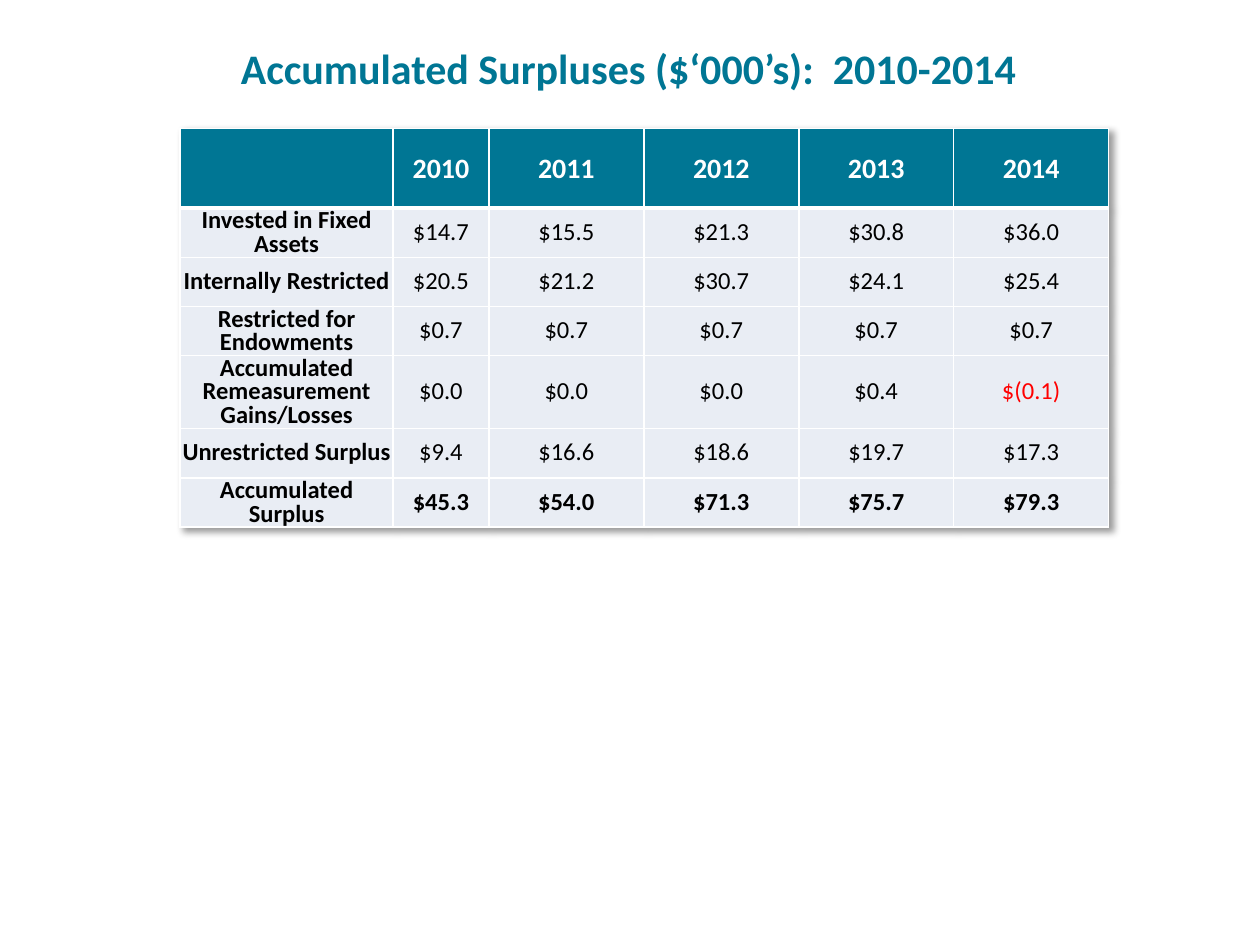
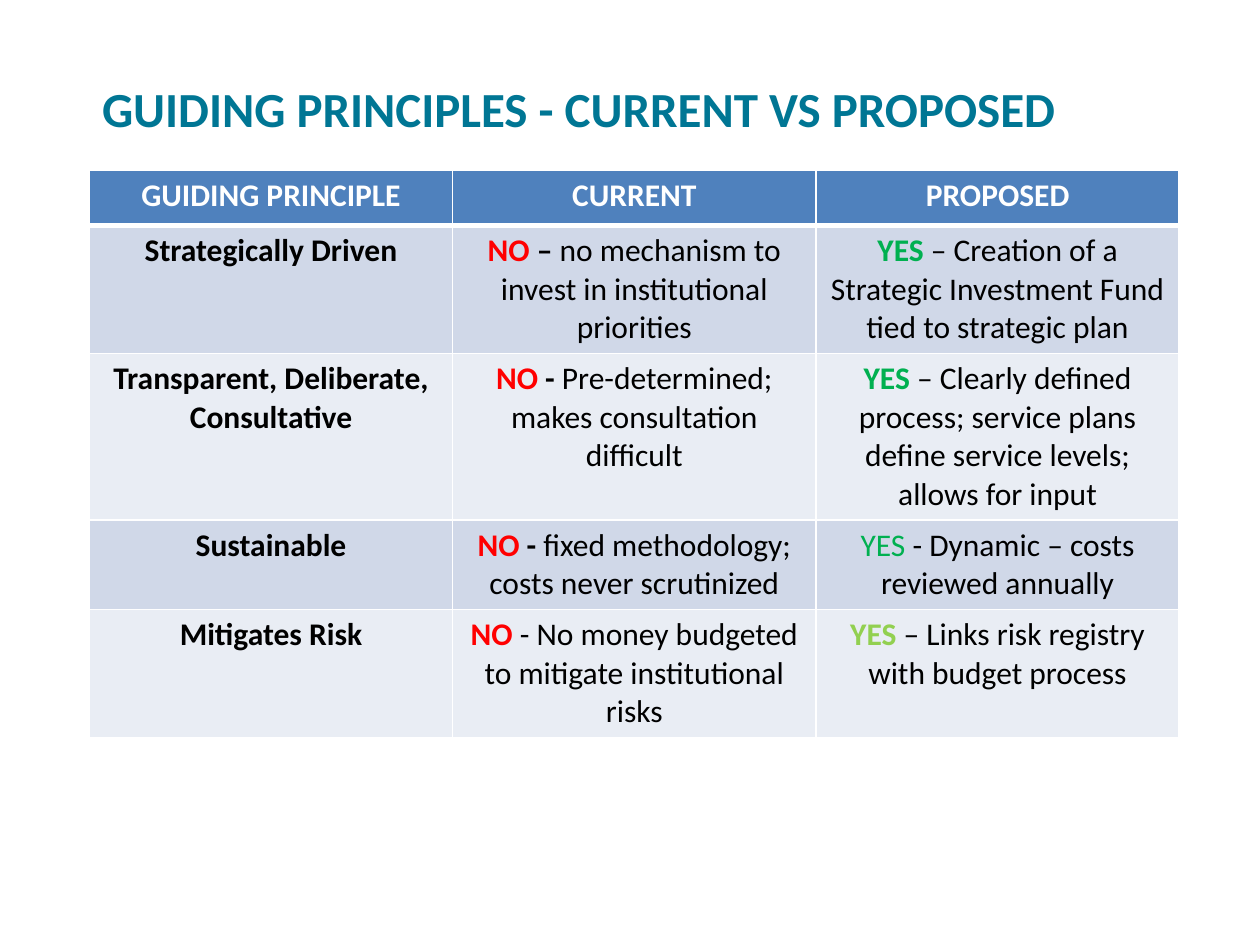
from lxml.etree import SubElement
from pptx import Presentation
from pptx.dml.color import RGBColor
from pptx.enum.text import MSO_ANCHOR, MSO_AUTO_SIZE, PP_ALIGN
from pptx.oxml.ns import qn
from pptx.util import Inches, Pt

FONT = "Calibri"
TEAL, BLUE, WHITE, BLACK = "007694", "4F81BD", "FFFFFF", "000000"
PALE, MID = "E9EDF4", "D0D8E8"
RED, GREEN, LIME = "FF0000", "00B050", "92D050"

SURPLUS_YEARS = ["", "2010", "2011", "2012", "2013", "2014"]
SURPLUSES = [
    ["Invested in Fixed Assets", "$14.7", "$15.5", "$21.3", "$30.8", "$36.0"],
    ["Internally Restricted", "$20.5", "$21.2", "$30.7", "$24.1", "$25.4"],
    ["Restricted for Endowments", "$0.7", "$0.7", "$0.7", "$0.7", "$0.7"],
    ["Accumulated Remeasurement Gains/Losses", "$0.0", "$0.0", "$0.0", "$0.4", "$(0.1)"],
    ["Unrestricted Surplus", "$9.4", "$16.6", "$18.6", "$19.7", "$17.3"],
    ["Accumulated Surplus", "$45.3", "$54.0", "$71.3", "$75.7", "$79.3"],
]

# Each cell is a list of runs: (text, colour, bold)
PRINCIPLE_HEADS = ["GUIDING PRINCIPLE", "CURRENT", "PROPOSED"]
PRINCIPLES = [
    [[("Strategically Driven", BLACK, True)],
     [("NO", RED, True), (" – ", BLACK, True),
      ("no mechanism to invest in institutional priorities", BLACK, False)],
     [("YES", GREEN, True),
      (" – Creation of a Strategic Investment Fund tied to strategic plan", BLACK, False)]],
    [[("Transparent, Deliberate, Consultative", BLACK, True)],
     [("NO ", RED, True), ("- ", BLACK, True),
      ("Pre-determined; makes consultation difficult", BLACK, False)],
     [("YES", GREEN, True),
      (" – Clearly defined process; service plans define service levels; "
       "allows for input", BLACK, False)]],
    [[("Sustainable", BLACK, True)],
     [("NO ", RED, True), ("- ", BLACK, True),
      ("fixed methodology; costs never scrutinized", BLACK, False)],
     [("YES", GREEN, False), (" - Dynamic – costs reviewed annually", BLACK, False)]],
    [[("Mitigates Risk", BLACK, True)],
     [("NO", RED, True),
      (" - No money budgeted to mitigate institutional risks", BLACK, False)],
     [("YES ", LIME, True), ("– Links risk registry with budget process", BLACK, False)]],
]


def rgb(color):
    return RGBColor.from_string(color)


def place(prs, box):
    """Turn left, top, width, height in percent of the slide into lengths."""
    sizes = (prs.slide_width, prs.slide_height) * 2
    return [int(size * share / 100) for size, share in zip(sizes, box)]


def format_run(r, size, color, bold):
    r.font.name, r.font.size, r.font.bold = FONT, Pt(size), bold
    r.font.color.rgb = rgb(color)


def add_titled_slide(prs, title, box, size, align):
    slide = prs.slides.add_slide(prs.slide_layouts[5])
    sp = slide.shapes.title
    sp.left, sp.top, sp.width, sp.height = place(prs, box)
    tf = sp.text_frame
    tf.text = title
    tf.word_wrap, tf.auto_size = True, MSO_AUTO_SIZE.NONE
    tf.vertical_anchor = MSO_ANCHOR.TOP
    p = tf.paragraphs[0]
    p.alignment, p.space_after = align, Pt(6)
    format_run(p.runs[0], size, TEAL, True)
    return slide


def add_grid(prs, slide, box, col_weights, row_weights):
    """Add a table whose columns and rows share the box by weight."""
    left, top, width, height = place(prs, box)
    frame = slide.shapes.add_table(len(row_weights), len(col_weights),
                                   left, top, width, height)
    table = frame.table
    table.horz_banding = False
    for col, weight in zip(table.columns, col_weights):
        col.width = int(width * weight / sum(col_weights))
    for row, weight in zip(table.rows, row_weights):
        row.height = int(height * weight / sum(row_weights))
    return table


def style_cell(cell, fill, bottom=1):
    tcPr = cell._tc.get_or_add_tcPr()
    for side, width in (("L", 1), ("R", 1), ("T", 1), ("B", bottom)):
        ln = SubElement(tcPr, qn(f"a:ln{side}"), w=str(Pt(width)))
        SubElement(SubElement(ln, qn("a:solidFill")), qn("a:srgbClr"), val=WHITE)
    cell.fill.solid()
    cell.fill.fore_color.rgb = rgb(fill)


def write_cell(cell, runs, size):
    p = cell.text_frame.paragraphs[0]
    p.alignment = PP_ALIGN.CENTER
    for text, color, bold in runs:
        r = p.add_run()
        r.text = text
        format_run(r, size, color, bold)
    return p


def write_header(table, heads, fill, size):
    for cell, head in zip(table.rows[0].cells, heads):
        style_cell(cell, fill, bottom=3)
        if head:
            write_cell(cell, [(head, WHITE, True)], size)


def add_table_shadow(table):
    effects = SubElement(table._tbl.tblPr, qn("a:effectLst"))
    table._tbl.tblPr.insert(0, effects)
    shadow = SubElement(effects, qn("a:outerShdw"), blurRad=str(Pt(4)), dist=str(Pt(3)),
                        dir="2700000", algn="tl", rotWithShape="0")
    color = SubElement(shadow, qn("a:prstClr"), val="black")
    SubElement(color, qn("a:alpha"), val="40000")


def surplus_slide(prs):
    slide = add_titled_slide(prs, "Accumulated Surpluses ($‘000’s):  2010-2014",
                             (6.9, 3.87, 86, 6.67), 24, PP_ALIGN.CENTER)
    table = add_grid(prs, slide, (14.3, 13.6, 73.7, 42.1),
                     [1.69, 0.76] + [1.23] * 4,
                     [0.63] + [0.39] * 3 + [0.57] + [0.39] * 2)
    add_table_shadow(table)
    write_header(table, SURPLUS_YEARS, TEAL, 16)
    for i, values in enumerate(SURPLUSES, 1):
        for j, value in enumerate(values):
            cell = table.cell(i, j)
            style_cell(cell, PALE)
            color = RED if "(" in value else BLACK
            bold = j == 0 or i == len(SURPLUSES)
            write_cell(cell, [(value, color, bold)], 14).line_spacing = 0.8
    for cell in table.iter_cells():
        cell.vertical_anchor = MSO_ANCHOR.MIDDLE
        cell.margin_left = cell.margin_right = cell.margin_top = Inches(0.01)
        cell.margin_bottom = 0


def principles_slide(prs):
    slide = add_titled_slide(prs, "GUIDING PRINCIPLES - CURRENT VS PROPOSED",
                             (7.1, 7.6, 92.9, 7.6), 28, PP_ALIGN.LEFT)
    table = add_grid(prs, slide, (7.1, 18, 86.5, 59.2),
                     [1] * 3, [0.44, 1, 1.3, 0.7, 1])
    write_header(table, PRINCIPLE_HEADS, BLUE, 18)
    for i, row in enumerate(PRINCIPLES, 1):
        for j, runs in enumerate(row):
            style_cell(table.cell(i, j), MID if i % 2 else PALE)
            write_cell(table.cell(i, j), runs, 18)


def main():
    prs = Presentation()
    prs.slide_width, prs.slide_height = Inches(10), Inches(7.5)
    surplus_slide(prs)
    principles_slide(prs)
    prs.save("out.pptx")


if __name__ == "__main__":
    main()
